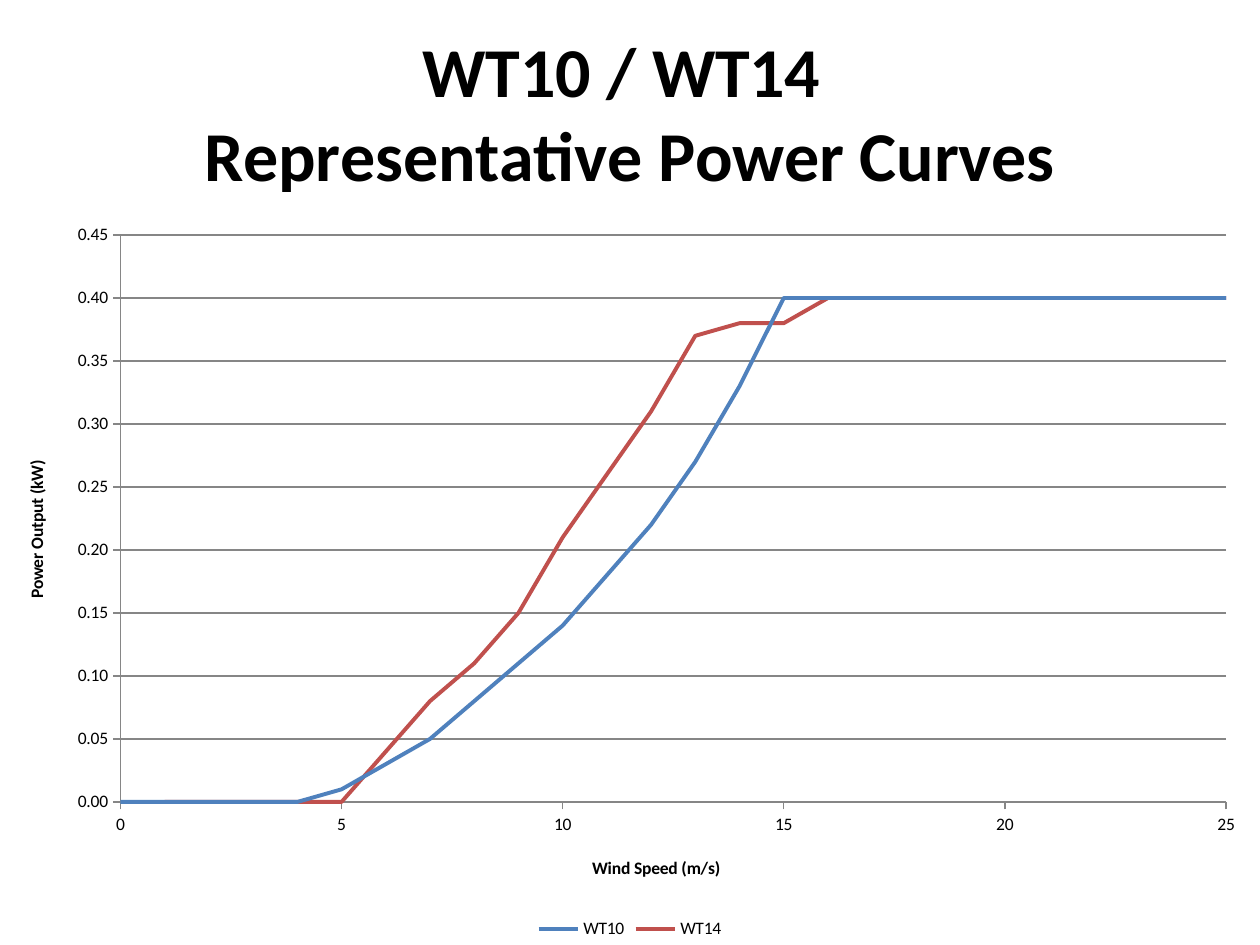
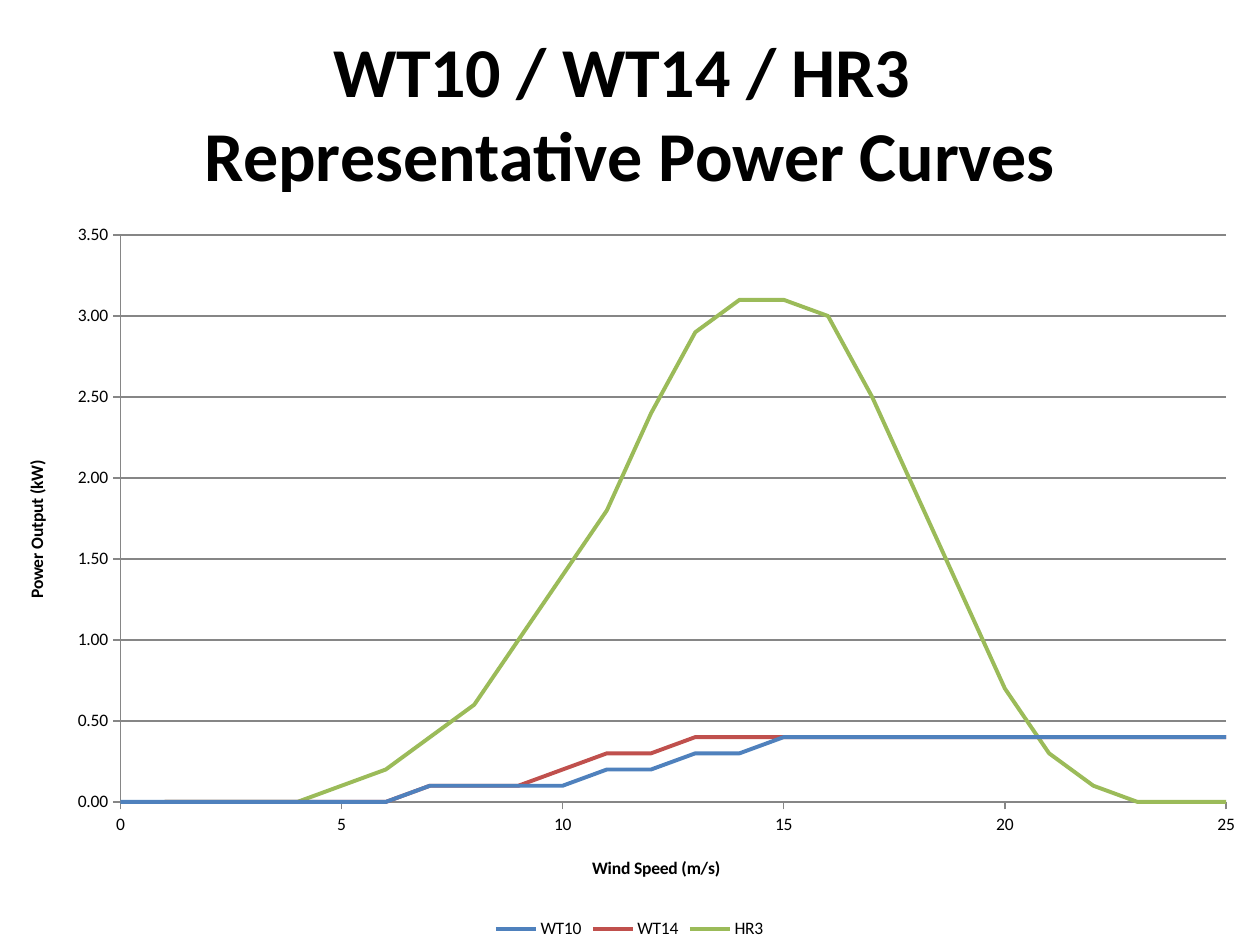
from lxml.etree import SubElement
from pptx import Presentation
from pptx.chart.data import XyChartData
from pptx.dml.color import RGBColor
from pptx.enum.chart import XL_CHART_TYPE, XL_LEGEND_POSITION, XL_TICK_MARK
from pptx.oxml.ns import qn
from pptx.util import Cm, Pt

SLIDE_WIDTH, SLIDE_HEIGHT = Cm(25.4), Cm(19.05)
FONT = "Calibri"
BLACK = RGBColor(0x00, 0x00, 0x00)
GRID_GRAY = RGBColor(0x86, 0x86, 0x86)
BLUE = RGBColor(0x4F, 0x81, 0xBD)
RED = RGBColor(0xC0, 0x50, 0x4D)
GREEN = RGBColor(0x9B, 0xBB, 0x59)

# Each turbine: colour, first wind speed (m/s), power (kW) at each further 1 m/s
TURBINES = {
    "WT10": (BLUE, 0, [0, 0, 0, 0, 0, 0.01, 0.03, 0.05, 0.08, 0.11, 0.14, 0.18,
                       0.22, 0.27, 0.33] + [0.4] * 11),
    "WT14": (RED, 1, [0, 0, 0, 0, 0, 0.04, 0.08, 0.11, 0.15, 0.21, 0.26, 0.31,
                      0.37, 0.38, 0.38] + [0.4] * 11),
    "HR3": (GREEN, 1, [0, 0, 0, 0, 0.1, 0.2, 0.4, 0.6, 1, 1.4, 1.8, 2.4, 2.9,
                       3.1, 3.1, 3, 2.5, 1.9, 1.3, 0.7, 0.3, 0.1, 0, 0, 0, 0]),
}


def place(element, index, **percents):
    """Fix a chart part at percents of the chart area; index is the layout's rank."""
    for old_layout in element.findall(qn("c:layout")):
        element.remove(old_layout)
    layout = SubElement(element, qn("c:layout"))
    element.insert(index, layout)
    manual = SubElement(layout, qn("c:manualLayout"))
    settings = {"xMode": "edge", "yMode": "edge"}
    if "w" in percents:
        settings = {"layoutTarget": "inner", **settings}
    settings.update({tag: round(value / 100, 4) for tag, value in percents.items()})
    for tag, value in settings.items():
        SubElement(manual, qn(f"c:{tag}")).set("val", str(value))


def write_title(title, text, size, x, y):
    title.text_frame.text = text
    for paragraph in title.text_frame.paragraphs:
        for run in paragraph.runs:
            run.font.name = FONT
            run.font.size = Pt(size)
            run.font.bold = True
            run.font.color.rgb = BLACK
    place(title._element, 1, x=x, y=y)


def style_axis(axis, maximum, step, number_format):
    axis.minimum_scale = 0
    axis.maximum_scale = maximum
    axis.major_unit = step
    axis.major_tick_mark = XL_TICK_MARK.OUTSIDE
    axis.minor_tick_mark = XL_TICK_MARK.NONE
    axis.tick_labels.number_format = number_format
    axis.tick_labels.number_format_is_linked = False
    axis.format.line.color.rgb = GRID_GRAY
    axis.format.line.width = Pt(0.75)


def add_power_curves(slide, turbine_names, digits, max_power, power_step, legend_x):
    curves = XyChartData()
    for name in turbine_names:
        _, first_speed, powers = TURBINES[name]
        curve = curves.add_series(name)
        for speed, power in enumerate(powers, first_speed):
            curve.add_data_point(speed, round(power, digits))
    chart = slide.shapes.add_chart(XL_CHART_TYPE.XY_SCATTER_LINES_NO_MARKERS,
                                   0, 0, SLIDE_WIDTH, SLIDE_HEIGHT, curves).chart
    chart.font.name = FONT
    chart.font.size = Pt(10)
    chart.font.color.rgb = BLACK

    heading = " / ".join(turbine_names) + " \nRepresentative Power Curves"
    write_title(chart.chart_title, heading, 40, 15.9, 2.7)

    speed_axis, power_axis = chart.category_axis, chart.value_axis
    style_axis(speed_axis, 25, 5, "0")
    style_axis(power_axis, max_power, power_step, "0.00")
    speed_axis.has_major_gridlines = False
    power_axis.has_major_gridlines = True
    power_axis.major_gridlines.format.line.color.rgb = GRID_GRAY
    power_axis.major_gridlines.format.line.width = Pt(1)
    write_title(speed_axis.axis_title, "Wind Speed (m/s)", 10, 46.75, 90.35)
    write_title(power_axis.axis_title, "Power Output (kW)", 10, 1.75, 48.4)
    place(chart._chartSpace.chart.plotArea, 0, x=9.56, y=24.88, w=87.75, h=60)

    chart.plots[0].vary_by_categories = False
    for curve in chart.plots[0].series:
        curve.smooth = False
        curve.format.line.color.rgb = TURBINES[curve.name][0]
        curve.format.line.width = Pt(2.25)

    chart.has_legend = True
    chart.legend.position = XL_LEGEND_POSITION.BOTTOM
    chart.legend.include_in_layout = False
    place(chart.legend._element, 1, x=legend_x, y=97.1)


def main():
    deck = Presentation()
    deck.slide_width, deck.slide_height = SLIDE_WIDTH, SLIDE_HEIGHT
    blank_layout = deck.slide_layouts[6]
    add_power_curves(deck.slides.add_slide(blank_layout),
                     ["WT10", "WT14"], 2, 0.45, 0.05, 42.3)
    add_power_curves(deck.slides.add_slide(blank_layout),
                     ["WT10", "WT14", "HR3"], 1, 3.5, 0.5, 38.9)
    deck.save("out.pptx")


if __name__ == "__main__":
    main()
